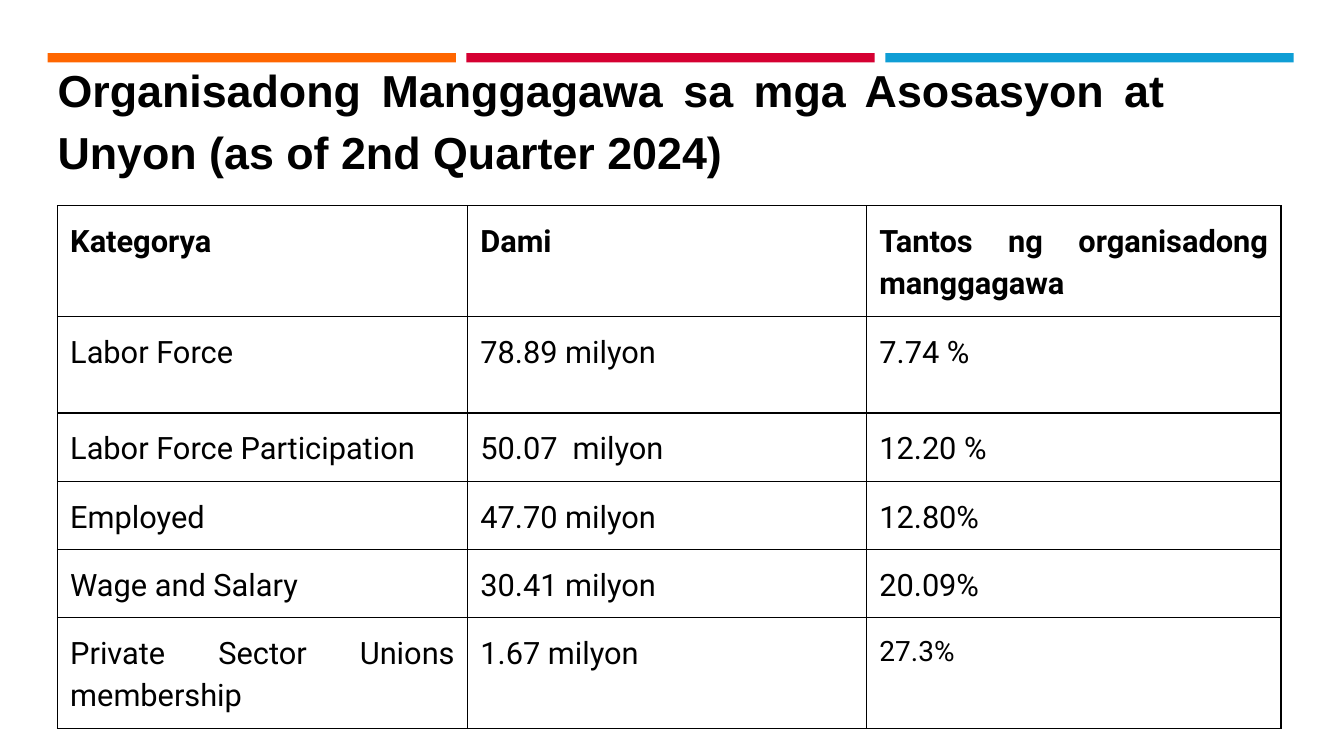
from dataclasses import dataclass

from lxml.etree import SubElement
from pptx import Presentation
from pptx.dml.color import RGBColor
from pptx.enum.shapes import MSO_SHAPE as Shape
from pptx.enum.text import MSO_ANCHOR as Anchor, PP_ALIGN as Align
from pptx.oxml.ns import qn
from pptx.util import Pt


@dataclass(frozen=True)
class Theme:
    ink: str = "000000"
    accents: tuple = ("FF6600", "D50032", "0F9ED5")
    title_font: str = "Arial"
    table_font: str = "Roboto"
    title_size: float = 32
    table_size: float = 22
    small_size: float = 20
    line_spacing: float = 1.15
    cell_inset: float = 9.2
    border: float = 1


class SlideBuilder:
    def __init__(self, slide, theme):
        self.slide = slide
        self.theme = theme

    def set_text(self, frame, text, font, size, bold=False):
        paragraph = frame.paragraphs[0]
        paragraph.text = text
        paragraph.alignment = Align.JUSTIFY
        paragraph.line_spacing = self.theme.line_spacing
        paragraph.font.name = font
        paragraph.font.size = Pt(size)
        paragraph.font.bold = bold
        paragraph.font.color.rgb = RGBColor.from_string(self.theme.ink)

    def bar(self, left, top, width, height, color):
        stripe = self.slide.shapes.add_shape(
            Shape.RECTANGLE, Pt(left), Pt(top), Pt(width), Pt(height))
        stripe.shadow.inherit = False
        stripe.fill.solid()
        stripe.fill.fore_color.rgb = RGBColor.from_string(color)
        stripe.line.fill.background()

    def title(self, text, left, top, width, height):
        heading = self.slide.shapes.add_textbox(
            Pt(left), Pt(top), Pt(width), Pt(height))
        frame = heading.text_frame
        frame.word_wrap = True
        frame.vertical_anchor = Anchor.MIDDLE
        self.set_text(frame, text, self.theme.title_font, self.theme.title_size, True)

    def outline(self, cell):
        properties = cell._tc.get_or_add_tcPr()
        for side in ("a:lnL", "a:lnR", "a:lnT", "a:lnB"):
            edge = SubElement(properties, qn(side), w=str(Pt(self.theme.border)))
            fill = SubElement(edge, qn("a:solidFill"))
            SubElement(fill, qn("a:srgbClr"), val=self.theme.ink)

    def table(self, rows, left, top, widths, heights, small_cells):
        table = self.slide.shapes.add_table(
            len(rows), len(widths), Pt(left), Pt(top),
            Pt(sum(widths)), Pt(sum(heights))).table
        table.horz_banding = False
        for column, width in zip(table.columns, widths):
            column.width = Pt(width)
        for r, (values, height) in enumerate(zip(rows, heights)):
            table.rows[r].height = Pt(height)
            for c, value in enumerate(values):
                cell = table.cell(r, c)
                cell.margin_left = cell.margin_right = Pt(self.theme.cell_inset)
                cell.margin_top = cell.margin_bottom = Pt(self.theme.cell_inset)
                self.outline(cell)
                cell.fill.background()
                size = (self.theme.small_size if value in small_cells
                        else self.theme.table_size)
                self.set_text(cell.text_frame, value, self.theme.table_font, size, r == 0)


LABOR_ROWS = [
    ("Kategorya", "Dami", "Tantos ng organisadong manggagawa"),
    ("Labor Force", "78.89 milyon", "7.74 %"),
    ("Labor Force Participation", "50.07  milyon", "12.20 %"),
    ("Employed", "47.70 milyon", "12.80%"),
    ("Wage and Salary", "30.41 milyon", "20.09%"),
    ("Private Sector Unions membership", "1.67 milyon", "27.3%"),
]


def main():
    presentation = Presentation()
    presentation.slide_width = Pt(960)
    presentation.slide_height = Pt(540)
    theme = Theme()
    slide = presentation.slides.add_slide(presentation.slide_layouts[6])
    builder = SlideBuilder(slide, theme)

    for index, accent in enumerate(theme.accents):
        builder.bar(34 + index * 299.2, 38, 291.6, 6.5, accent)
    builder.title("Organisadong Manggagawa sa mga Asosasyon at Unyon "
                  "(as of 2nd Quarter 2024)", 34, 59, 805.7, 49)
    builder.table(LABOR_ROWS, 41, 147, (293, 285, 296),
                  (78, 69, 47, 47, 47, 78), {"27.3%"})

    presentation.save("out.pptx")


if __name__ == "__main__":
    main()
